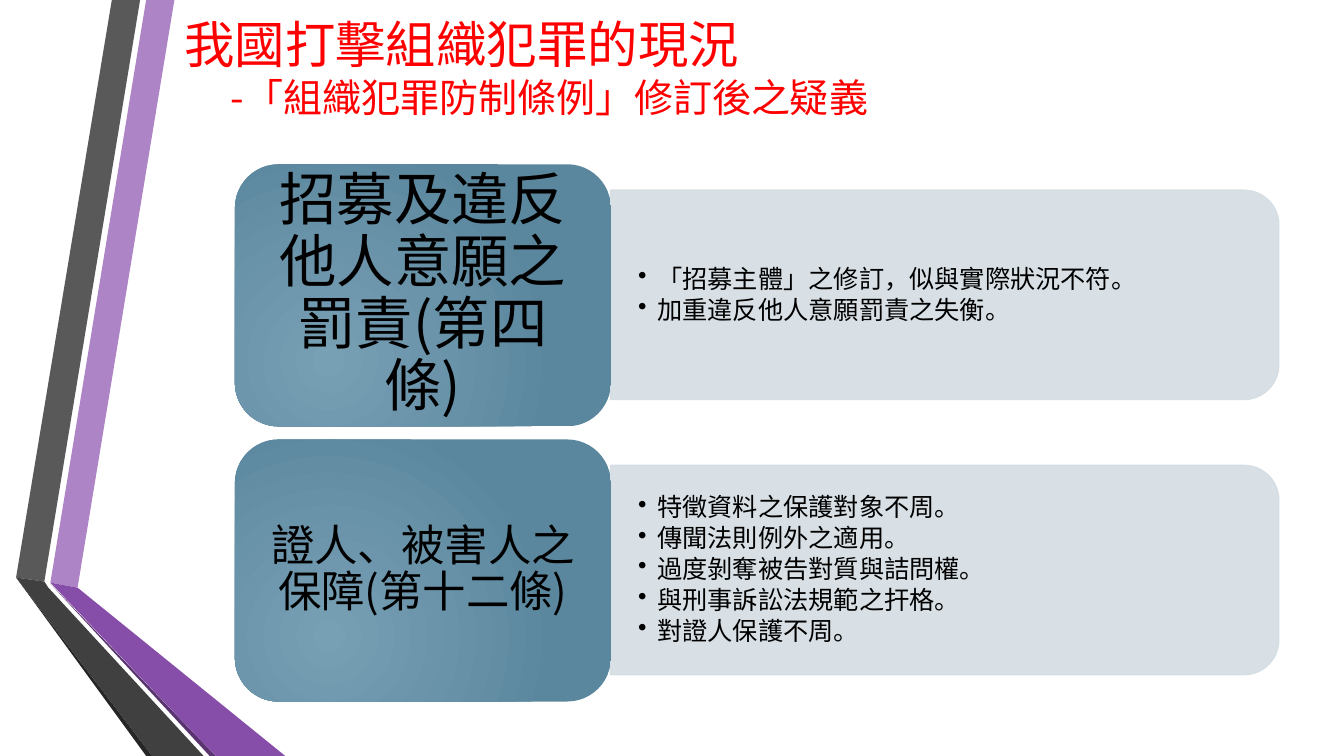
from lxml import etree
from pptx import Presentation
from pptx.dml.color import RGBColor
from pptx.enum import shapes, text
from pptx.oxml import ns, parse_xml
from pptx.util import Inches, Pt

FONT = "Noto Sans CJK SC"
RED = RGBColor(0xFF, 0x00, 0x00)
BLACK = RGBColor(0x00, 0x00, 0x00)
PALE = RGBColor(0xD4, 0xDD, 0xE3)
LILAC = RGBColor(0xAD, 0x84, 0xC6)
PURPLE = RGBColor(0x87, 0x4E, 0xA9)
DEEP_PURPLE = RGBColor(0x5A, 0x34, 0x71)
GREY = RGBColor(0x59, 0x59, 0x59)
DARK_GREY = RGBColor(0x40, 0x40, 0x40)
NEAR_BLACK = RGBColor(0x26, 0x26, 0x26)
GRADIENT = (
    f'<a:gradFill {ns.nsdecls("a")} rotWithShape="1"><a:gsLst>'
    '<a:gs pos="0"><a:srgbClr val="78A0B5"/></a:gs>'
    '<a:gs pos="100000"><a:srgbClr val="5B879E"/></a:gs></a:gsLst>'
    '<a:path path="circle"><a:fillToRect l="50000" t="100000" r="100000" b="50000"/>'
    '</a:path></a:gradFill>'
)


def set_frame(frame, side, top):
    frame.word_wrap = True
    frame.vertical_anchor = text.MSO_ANCHOR.MIDDLE
    frame.margin_left = frame.margin_right = Inches(side)
    frame.margin_top = frame.margin_bottom = Inches(top)


def style(paragraph, size, color):
    for run in paragraph.runs:
        run.font.size = Pt(size)
        run.font.name = FONT
        run.font.color.rgb = color
        east_asian = etree.SubElement(run.font._element, ns.qn("a:ea"))
        east_asian.set("typeface", FONT)


prs = Presentation()
prs.slide_width, prs.slide_height = Inches(13.33), Inches(7.5)
slide = prs.slides.add_slide(prs.slide_layouts[6])

# Folded ribbons along the left edge
ribbons = [
    (LILAC, [(0.5, 5.78), (0.77, 5.83), (1.73, 0), (1.45, 0)]),
    (GREY, [(1.39, 0), (1.11, 0), (0.16, 5.73), (0.44, 5.77)]),
    (NEAR_BLACK, [(0.16, 5.73), (1.45, 7.5), (1.51, 7.5)]),
    (DEEP_PURPLE, [(0.5, 5.79), (2.08, 7.5), (2.14, 7.5)]),
    (PURPLE, [(0.5, 5.78), (2.14, 7.5), (2.83, 7.5), (0.77, 5.83)]),
    (DARK_GREY, [(2.02, 7.5), (0.48, 5.83), (0.44, 5.77), (0.16, 5.73), (1.51, 7.5)]),
]
for color, points in ribbons:
    corners = [(Inches(x), Inches(y)) for x, y in points]
    outline = slide.shapes.build_freeform(*corners[0])
    outline.add_line_segments(corners[1:], close=True)
    ribbon = outline.convert_to_shape()
    ribbon.shadow.inherit = False
    ribbon.fill.solid()
    ribbon.fill.fore_color.rgb = color
    ribbon.line.fill.background()

# Title and subtitle
title = slide.shapes.add_textbox(Inches(1.73), 0, Inches(10.96), Inches(1.32)).text_frame
set_frame(title, 0.1, 0.05)
title.text = "我國打擊組織犯罪的現況\n-「組織犯罪防制條例」修訂後之疑義"
heading, subtitle = title.paragraphs
style(heading, 36, RED)
style(subtitle, 27.9, RED)
subtitle._p.get_or_add_pPr().set("marL", str(Inches(0.46)))

# One row per topic: label block and panel of points
topics = [
    ("招募及違反他人意願之罰責(第四條)", 41, 0.17, 0.09,
     ["「招募主體」之修訂，似與實際狀況不符。", "加重違反他人意願罰責之失衡。"]),
    ("證人、被害人之保障(第十二條)", 31, 0.13, 0.06,
     ["特徵資料之保護對象不周。", "傳聞法則例外之適用。", "過度剝奪被告對質與詰問權。",
      "與刑事訴訟法規範之扞格。", "對證人保護不周。"]),
]
for row, (topic, size, side, top_inset, points) in enumerate(topics):
    top = 1.63 + row * 2.73

    # Panel, turned so that its rounded corners face right
    panel = slide.shapes.add_shape(
        shapes.MSO_SHAPE.ROUND_2_SAME_RECTANGLE,
        Inches(8.33), Inches(top - 2.02), Inches(2.08), Inches(6.63))
    panel.rotation = 90
    panel.shadow.inherit = False
    panel.fill.solid()
    panel.fill.fore_color.rgb = PALE
    panel.line.color.rgb = PALE
    panel.line.width = Pt(0.75)
    for tint in panel._element.spPr.iter(ns.qn("a:srgbClr")):
        etree.SubElement(tint, ns.qn("a:alpha")).set("val", "90000")

    # Bulleted points
    details = slide.shapes.add_textbox(
        Inches(6.06), Inches(top + 0.36), Inches(6.53), Inches(1.88)).text_frame
    set_frame(details, 0.27, 0.14)
    details.text = "\n".join(points)
    for point in details.paragraphs:
        style(point, 18, BLACK)
        point.line_spacing = 0.9
        point.space_after = Pt(2.7)
        properties = point._p.get_or_add_pPr()
        properties.set("marL", str(Inches(0.19)))
        properties.set("indent", str(Inches(-0.19)))
        etree.SubElement(properties, ns.qn("a:buChar")).set("char", "•")

    # Label block
    label = slide.shapes.add_shape(
        shapes.MSO_SHAPE.ROUNDED_RECTANGLE,
        Inches(2.33), Inches(top), Inches(3.73), Inches(2.6))
    label.shadow.inherit = False
    label.line.fill.background()
    label._element.spPr.find(ns.qn("a:prstGeom")).addnext(parse_xml(GRADIENT))
    set_frame(label.text_frame, side, top_inset)
    label.text_frame.text = topic
    caption = label.text_frame.paragraphs[0]
    caption.alignment = text.PP_ALIGN.CENTER
    caption.line_spacing = 0.9
    style(caption, size, BLACK)

prs.save("out.pptx")
